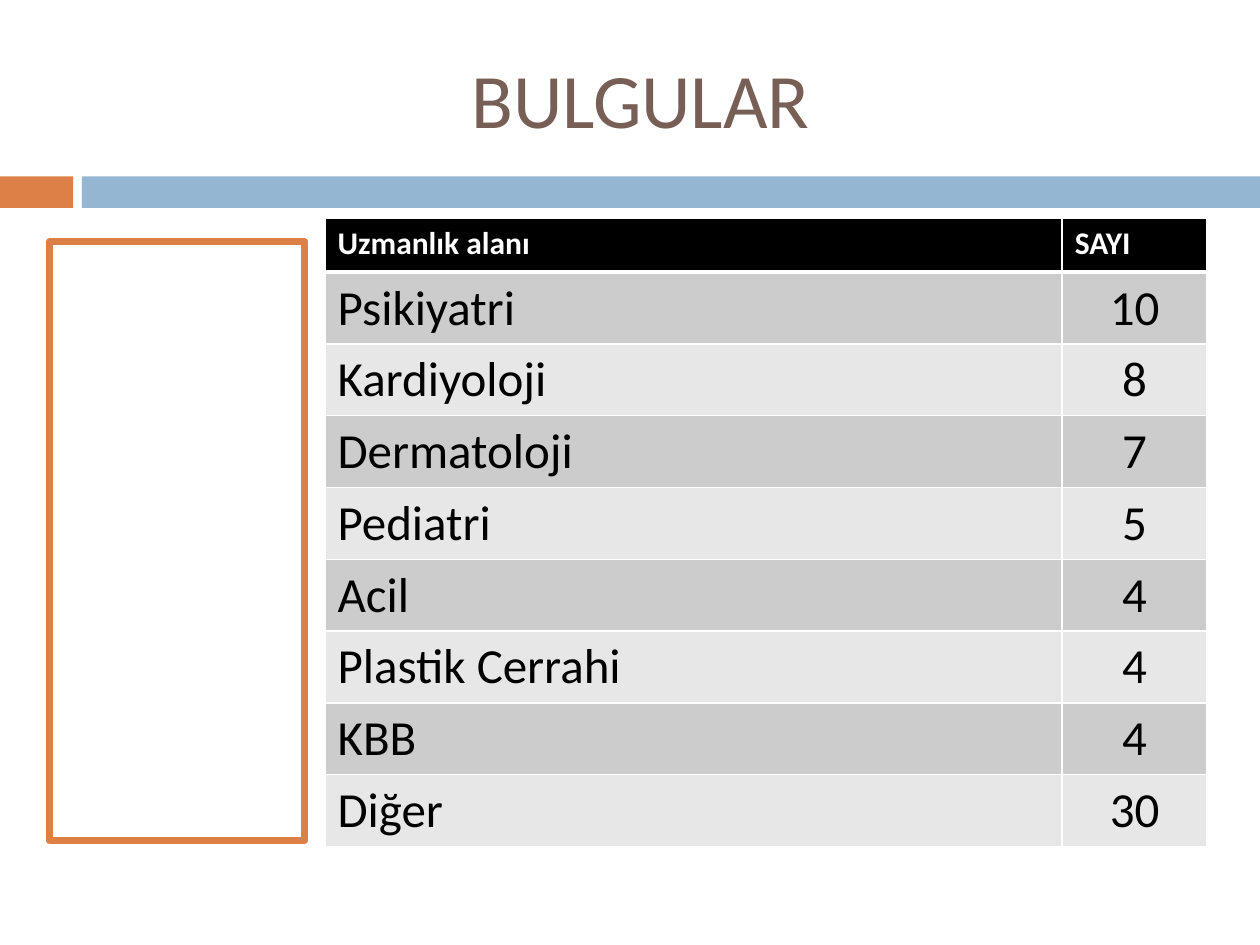
from lxml.etree import SubElement
from pptx import Presentation
from pptx.dml.color import RGBColor
from pptx.enum.shapes import MSO_SHAPE as Shape
from pptx.enum.text import MSO_ANCHOR as Anchor, PP_ALIGN as Align
from pptx.oxml.ns import qn
from pptx.util import Inches, Pt

WIDTH, HEIGHT = 10, 7.5
FONT = "Calibri"
ORANGE = RGBColor(0xDD, 0x80, 0x47)
BLUE = RGBColor(0x94, 0xB6, 0xD2)
BROWN = RGBColor(0x77, 0x5F, 0x55)
BLACK = RGBColor(0, 0, 0)
WHITE = RGBColor(0xFF, 0xFF, 0xFF)
BANDS = (RGBColor(0xCC, 0xCC, 0xCC), RGBColor(0xE7, 0xE7, 0xE7))

BAND_TOP, BAND_HEIGHT = 1.4, 0.25
ACCENT_WIDTH, BAND_LEFT = 0.58, 0.65
COLUMN_WIDTHS = (5.85, 1.15)
HEADER_HEIGHT, ROW_HEIGHT = 0.43, 0.57
HEADER_FORMAT = {"size": Pt(18), "bold": True, "name": FONT}
BODY_FORMAT = {"size": Pt(28), "bold": False, "name": FONT}
TITLE_FORMAT = {"size": Pt(44), "name": FONT}

HEADINGS = ("Uzmanlık alanı", "SAYI")
SPECIALTIES = (
    ("Psikiyatri", 10),
    ("Kardiyoloji", 8),
    ("Dermatoloji", 7),
    ("Pediatri", 5),
    ("Acil", 4),
    ("Plastik Cerrahi", 4),
    ("KBB", 4),
    ("Diğer", 30),
)


def write_text(frame, text, color, text_format, align):
    para = frame.paragraphs[0]
    para.alignment = align
    span = para.add_run()
    span.text = text
    span.font.color.rgb = color
    for name, value in text_format.items():
        setattr(span.font, name, value)


def add_title(page, text):
    box = page.shapes.add_textbox(Inches(0.67), Inches(0.3), Inches(8.83), Inches(0.95))
    box.text_frame.word_wrap = True
    box.text_frame.vertical_anchor = Anchor.MIDDLE
    write_text(box.text_frame, text, BROWN, TITLE_FORMAT, Align.CENTER)


def add_rectangle(page, area, fill=None, outline=None):
    box = page.shapes.add_shape(Shape.RECTANGLE, *map(Inches, area))
    box.shadow.inherit = False
    if fill is None:
        box.fill.background()
    else:
        box.fill.solid()
        box.fill.fore_color.rgb = fill
    if outline is None:
        box.line.fill.background()
    else:
        box.line.color.rgb = outline
        box.line.width = Pt(4)


def set_borders(cell, bottom_width, top_width):
    properties = cell._tc.get_or_add_tcPr()
    widths = {"lnL": 1, "lnR": 1, "lnT": top_width, "lnB": bottom_width}
    for position, (side, width) in enumerate(widths.items()):
        line = SubElement(properties, qn(f"a:{side}"), w=str(Pt(width)))
        fill = SubElement(line, qn("a:solidFill"))
        SubElement(fill, qn("a:srgbClr"), val=str(WHITE))
        properties.insert(position, line)


def add_specialty_table(page):
    rows = (HEADINGS, *SPECIALTIES)
    table_height = HEADER_HEIGHT + ROW_HEIGHT * len(SPECIALTIES)
    area = (2.58, 1.73, sum(COLUMN_WIDTHS), table_height)
    table = page.shapes.add_table(len(rows), len(HEADINGS), *map(Inches, area)).table
    for column, width in zip(table.columns, COLUMN_WIDTHS):
        column.width = Inches(width)
    for row_index, values in enumerate(rows):
        header = row_index == 0
        table.rows[row_index].height = Inches(HEADER_HEIGHT if header else ROW_HEIGHT)
        for column_index, value in enumerate(values):
            cell = table.cell(row_index, column_index)
            cell.fill.solid()
            cell.fill.fore_color.rgb = BLACK if header else BANDS[(row_index - 1) % 2]
            set_borders(cell, 3 if header else 1, 3 if row_index == 1 else 1)
            centred = column_index == 1 and not header
            write_text(
                cell.text_frame,
                str(value),
                WHITE if header else BLACK,
                HEADER_FORMAT if header else BODY_FORMAT,
                Align.CENTER if centred else Align.LEFT,
            )


def main():
    deck = Presentation()
    deck.slide_width, deck.slide_height = Inches(WIDTH), Inches(HEIGHT)
    page = deck.slides.add_slide(deck.slide_layouts[6])
    add_rectangle(page, (0, BAND_TOP, ACCENT_WIDTH, BAND_HEIGHT), ORANGE)
    add_rectangle(page, (BAND_LEFT, BAND_TOP, WIDTH - BAND_LEFT, BAND_HEIGHT), BLUE)
    add_title(page, "BULGULAR")
    add_rectangle(page, (0.39, 1.92, 2.03, 4.75), outline=ORANGE)
    add_specialty_table(page)
    deck.save("out.pptx")


if __name__ == "__main__":
    main()
